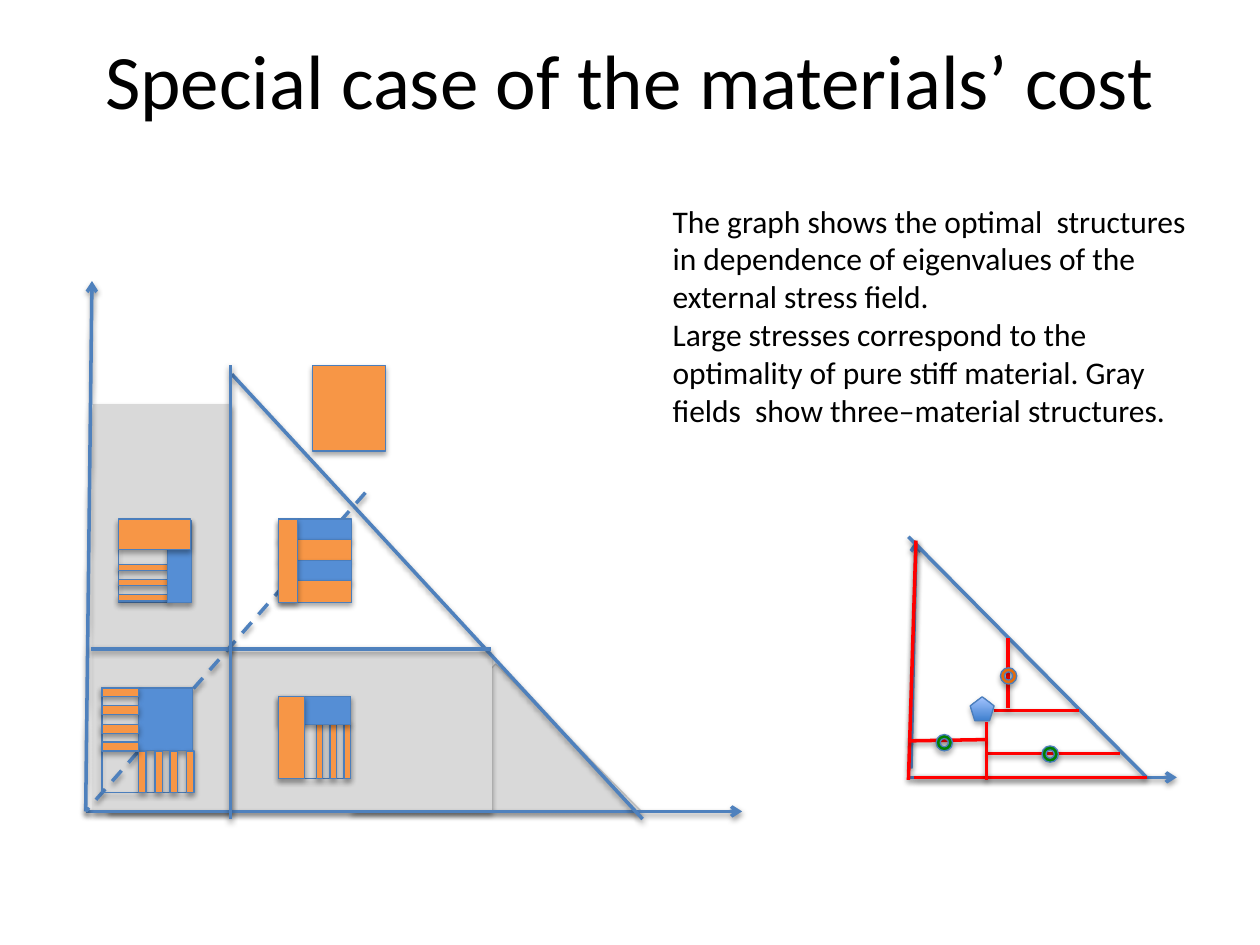
from lxml.etree import SubElement
from pptx import Presentation
from pptx.dml.color import RGBColor
from pptx.enum.dml import MSO_LINE
from pptx.enum.shapes import MSO_CONNECTOR, MSO_SHAPE
from pptx.enum.text import MSO_ANCHOR, MSO_AUTO_SIZE, PP_ALIGN
from pptx.oxml.ns import qn
from pptx.util import Pt

PX = 9144  # 100 px to the inch

THEME = {
    "font": "Calibri", "title": 44, "body": 18,
    "text": "000000", "gray": "D9D9D9", "gray edge": "BFBFBF",
    "blue": "558ED5", "orange": "F79646", "edge": "4B7EBC",
    "axis": "4F81BD", "red": "FF0000", "green": "008000", "rust": "E46C0A",
    "light end": "A4C4FF", "dark end": "3F80CE",
    "thin": 0.75, "thick": 2,
}

TITLE = "Special case of the materials’ cost"
TITLE_BOX = (50, 0, 900, 125)
BODY = [
    "The graph shows the optimal  structures in dependence of eigenvalues "
    "of the external stress field.",
    "Large stresses correspond to the optimality of pure stiff material. "
    "Gray fields  show three–material structures.",
]
BODY_BOX = (524, 155, 443, 222)

# Boxes are (left, top, width, height); lines are (x1, y1, x2, y2).
GRAY_FIELDS = [(86, 518, 304, 126), (74, 321, 110, 323)]
SLOPED_FIELD = (278, 527, 231, 117)

# (ends, colour, kind)
MAIN_LINES = [
    ((68, 644, 589, 644), "axis", "arrow"),
    ((68, 644, 73, 223), "axis", "arrow"),
    ((184, 297, 510, 650), "axis", "plain"),
    ((290, 391, 68, 644), "axis", "dash"),
    ((72, 515, 390, 515), "axis", "plain"),
    ((183, 290, 183, 650), "axis", "plain"),
]
SMALL_AXES = [
    ((723, 610, 727, 429), "axis", "arrow"),
    ((721, 617, 934, 617), "axis", "arrow"),
    ((721, 426, 910, 617), "axis", "plain"),
    ((789, 564, 856, 564), "red", "plain"),
    ((800, 562, 800, 506), "red", "plain"),
    ((725, 617, 910, 617), "red", "plain"),
]
SMALL_PATHS = [
    ((783, 598, 889, 598), "red", "plain"),
    ((783, 619, 783, 573), "red", "plain"),
    ((721, 619, 727, 429), "red", "plain"),
    ((721, 588, 783, 587), "red", "plain"),
]
PENTAGON = (770, 553, 19, 19)
RING_SIZE = 13
RINGS = [(794, 530, "rust"), (827, 592, "green"), (743, 583, "green")]


def stripes(first, count, step_x=0, step_y=0, fills=("orange",)):
    """Equal boxes at a regular step, with the fills taken in turn."""
    left, top, width, height = first
    return [((left + round(i * step_x), top + round(i * step_y), width, height),
             fills[i % len(fills)]) for i in range(count)]


# Each structure is a list of (box, fill); None is an open frame.
STRUCTURES = {
    "both stresses small": [
        ((81, 546, 72, 83), None),
        ((110, 546, 43, 50), "blue"),
        *stripes((110, 596, 6, 33), 4, step_x=12.7),
        *stripes((81, 546, 29, 7), 4, step_y=14.4),
    ],
    "both stresses medium": [
        *stripes((221, 412, 58, 17), 4, step_y=16.4, fills=("blue", "orange")),
        ((221, 412, 15, 66), "orange"),
    ],
    "pure stiff material": [((248, 290, 58, 68), "orange")],
    "first stress larger": [
        ((221, 553, 57, 65), None),
        *stripes((251, 573, 5, 45), 3, step_x=11),
        ((221, 553, 57, 22), "blue"),
        ((221, 553, 21, 65), "orange"),
    ],
    "second stress larger": [
        ((94, 413, 57, 65), None),
        *stripes((94, 448, 40, 5), 3, step_y=12.2),
        ((133, 413, 19, 65), "blue"),
        ((94, 412, 57, 24), "orange"),
    ],
}


def scaled(lengths):
    return [length * PX for length in lengths]


def color(name):
    return RGBColor.from_string(THEME[name])


def add_shadow(shape, distance, opacity):
    effects = SubElement(shape._element.spPr, qn("a:effectLst"))
    shadow = SubElement(effects, qn("a:outerShdw"), blurRad="40000",
                        dist=str(distance), dir="5400000", rotWithShape="0")
    black = SubElement(shadow, qn("a:srgbClr"), val="000000")
    SubElement(black, qn("a:alpha"), val=str(opacity * 1000))


def add_figure(group, kind, box, fill, edge="edge"):
    shape = group.shapes.add_shape(kind, *scaled(box))
    if fill is None:
        shape.fill.background()
    else:
        shape.fill.solid()
        shape.fill.fore_color.rgb = color(fill)
    shape.line.color.rgb = color(edge)
    shape.line.width = Pt(THEME["thin"])
    add_shadow(shape, 23000, 35)
    return shape


def add_lines(group, lines):
    for ends, line_color, kind in lines:
        connector = group.shapes.add_connector(MSO_CONNECTOR.STRAIGHT, *scaled(ends))
        connector.line.color.rgb = color(line_color)
        connector.line.width = Pt(THEME["thick"])
        if kind == "dash":
            connector.line.dash_style = MSO_LINE.DASH
        elif kind == "arrow":
            SubElement(connector.line._get_or_add_ln(), qn("a:tailEnd"), type="arrow")
        add_shadow(connector, 20000, 38)


def add_main_graph(slide):
    group = slide.shapes.add_group_shape()
    slope = add_figure(group, MSO_SHAPE.TRAPEZOID, SLOPED_FIELD, "gray", "gray edge")
    slope.adjustments[0] = 1.07
    for box in GRAY_FIELDS:
        add_figure(group, MSO_SHAPE.RECTANGLE, box, "gray", "gray")
    add_lines(group, MAIN_LINES)
    for parts in STRUCTURES.values():
        for box, fill in parts:
            add_figure(group, MSO_SHAPE.RECTANGLE, box, fill)


def add_small_graph(slide):
    group = slide.shapes.add_group_shape()
    add_lines(group, SMALL_AXES)
    pentagon = add_figure(group, MSO_SHAPE.REGULAR_PENTAGON, PENTAGON, "blue")
    pentagon.fill.gradient()
    pentagon.fill.gradient_angle = 90
    for stop, name in zip(pentagon.fill.gradient_stops, ("dark end", "light end")):
        stop.color.rgb = color(name)
    add_lines(group, SMALL_PATHS)
    for left, top, fill in RINGS:
        add_figure(group, MSO_SHAPE.DONUT, (left, top, RING_SIZE, RING_SIZE), fill)


def write(shape, paragraphs, size, alignment, **frame_format):
    frame = shape.text_frame
    frame.text = "\n".join(paragraphs)
    for name, value in frame_format.items():
        setattr(frame, name, value)
    for paragraph in frame.paragraphs:
        paragraph.alignment = alignment
        font = paragraph.runs[0].font
        font.color.rgb = color("text")
        for name, value in {"name": THEME["font"], "size": Pt(THEME[size])}.items():
            setattr(font, name, value)


def main():
    presentation = Presentation()
    presentation.slide_width, presentation.slide_height = scaled((1000, 750))
    slide = presentation.slides.add_slide(presentation.slide_layouts[5])
    title = slide.shapes.title
    title.left, title.top, title.width, title.height = scaled(TITLE_BOX)
    write(title, [TITLE], "title", PP_ALIGN.CENTER, vertical_anchor=MSO_ANCHOR.MIDDLE)
    add_main_graph(slide)
    add_small_graph(slide)
    body = slide.shapes.add_textbox(*scaled(BODY_BOX))
    write(body, BODY, "body", PP_ALIGN.LEFT, word_wrap=True,
          auto_size=MSO_AUTO_SIZE.SHAPE_TO_FIT_TEXT)
    presentation.save("out.pptx")


if __name__ == "__main__":
    main()
